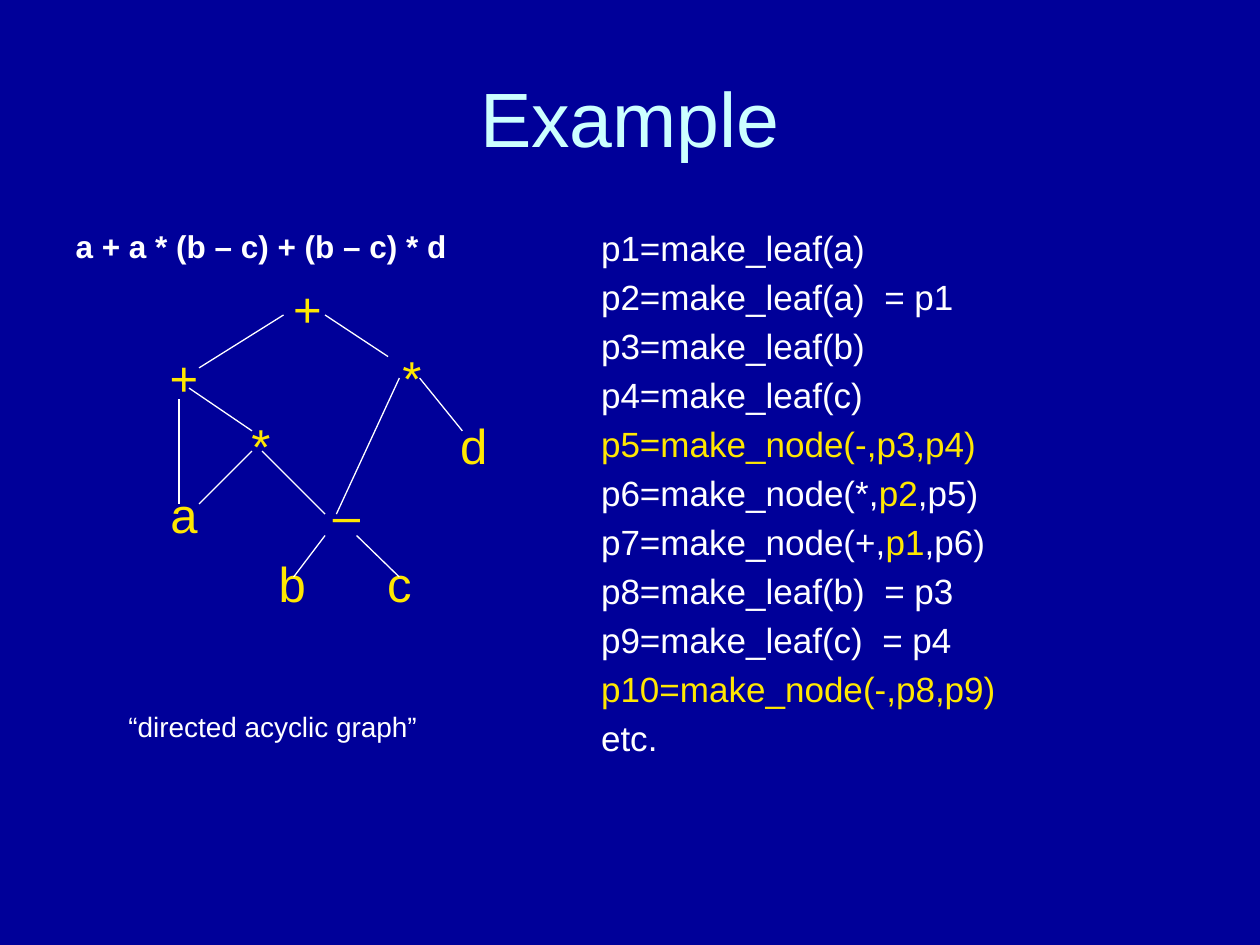
from lxml.etree import SubElement
from pptx import Presentation
from pptx.dml.color import RGBColor
from pptx.enum.shapes import MSO_CONNECTOR as Link
from pptx.enum.text import MSO_ANCHOR as Anchor, MSO_AUTO_SIZE as Fit, PP_ALIGN as Align
from pptx.oxml.ns import qn
from pptx.util import Inches, Pt

NAVY = RGBColor(0x00, 0x00, 0x99)
ICE = RGBColor(0xCC, 0xFF, 0xFF)
WHITE = RGBColor(0xFF, 0xFF, 0xFF)
GOLD = RGBColor(0xFF, 0xE7, 0x01)

TITLE = "Example"
FORMULA = "a + a * (b – c) + (b – c) * d"
CAPTION = "“directed acyclic graph”"

# Each tree row: (symbol, centre from the left edge of the slide)
TREE = [
    [("+", 2.44)],
    [("+", 1.46), ("*", 3.27)],
    [("*", 2.07), ("d", 3.76)],
    [("a", 1.46), ("–", 2.75)],
    [("b", 2.32), ("c", 3.17)],
]
TREE_TOP, ROW_STEP = 2.21, 0.545
NODE_W, NODE_H = 0.4, 0.45

# Edges of the graph: x1, y1, x2, y2
EDGES = [
    (1.58, 2.92, 2.25, 2.5),
    (2.58, 2.5, 3.08, 2.83),
    (3.33, 3, 3.67, 3.42),
    (3.17, 3, 2.67, 4.08),
    (2.58, 4.25, 2.33, 4.58),
    (2.83, 4.25, 3.17, 4.58),
    (1.42, 3.17, 1.42, 4),
    (1.5, 3.08, 2, 3.42),
    (2.08, 3.58, 2.58, 4.08),
    (2, 3.58, 1.58, 4),
]

# Each step: runs of (text, colour)
STEPS = [
    [("p1=make_leaf(a)", WHITE)],
    [("p2=make_leaf(a)  = p1", WHITE)],
    [("p3=make_leaf(b)", WHITE)],
    [("p4=make_leaf(c)", WHITE)],
    [("p5=make_node(-,p3,p4)", GOLD)],
    [("p6=make_node(*,", WHITE), ("p2", GOLD), (",p5)", WHITE)],
    [("p7=make_node(+,", WHITE), ("p1", GOLD), (",p6)", WHITE)],
    [("p8=make_leaf(b)  = p3", WHITE)],
    [("p9=make_leaf(c)  = p4", WHITE)],
    [("p10=make_node(-,p8,p9)", GOLD)],
    [("etc.", WHITE)],
]


def place(shape, left, top, width, height):
    shape.left, shape.top = Inches(left), Inches(top)
    shape.width, shape.height = Inches(width), Inches(height)
    frame = shape.text_frame
    frame.word_wrap = True
    frame.auto_size = Fit.NONE
    return frame


def style(para, size, color=None, bold=False):
    font = para.font
    font.name, font.size, font.bold = "Arial", Pt(size), bold
    if color is not None:
        font.color.rgb = color


def add_line(frame, runs, size, bold=False):
    """Add a paragraph without a bullet or indent."""
    para = frame.paragraphs[0]
    if para.runs:
        para = frame.add_paragraph()
    shared = len(runs) == 1
    style(para, size, runs[0][1] if shared else None, bold)
    for text, color in runs:
        run = para.add_run()
        run.text = text
        if not shared:
            run.font.color.rgb = color
    props = para._p.get_or_add_pPr()
    props.set("marL", "0")
    props.set("indent", "0")
    mark = props.find(qn("a:defRPr"))
    mark.addprevious(SubElement(props, qn("a:buNone")))


def add_node(slide, symbol, center, top):
    box = slide.shapes.add_textbox(0, 0, 0, 0)
    frame = place(box, center - NODE_W / 2, top, NODE_W, NODE_H)
    frame.margin_left = frame.margin_right = 0
    frame.margin_top = frame.margin_bottom = 0
    frame.text = symbol
    frame.paragraphs[0].alignment = Align.CENTER
    style(frame.paragraphs[0], 28, GOLD)


def add_edge(slide, x1, y1, x2, y2):
    edge = slide.shapes.add_connector(
        Link.STRAIGHT, Inches(x1), Inches(y1), Inches(x2), Inches(y2))
    edge.line.color.rgb = WHITE
    edge.line.width = Pt(0.75)
    SubElement(edge._element.spPr, qn("a:effectLst"))


def main():
    deck = Presentation()
    deck.slide_width, deck.slide_height = Inches(10), Inches(7.5)
    slide = deck.slides.add_slide(deck.slide_layouts.get_by_name("Two Content"))
    back = slide.background.fill
    back.solid()
    back.fore_color.rgb = NAVY
    title, formula, code = slide.placeholders

    head = place(title, 0.5, 0.3, 9, 1.25)
    head.text = TITLE
    head.vertical_anchor = Anchor.MIDDLE
    head.paragraphs[0].alignment = Align.CENTER
    style(head.paragraphs[0], 44, ICE)

    left = place(formula, 0.5, 1.75, 4.42, 4.95)
    add_line(left, [(FORMULA, WHITE)], 18, bold=True)

    right = place(code, 4.67, 1.75, 4.83, 4.95)
    for runs in STEPS:
        add_line(right, runs, 20)

    for i, row in enumerate(TREE):
        for symbol, center in row:
            add_node(slide, symbol, center, TREE_TOP + i * ROW_STEP)
    for edge in EDGES:
        add_edge(slide, *edge)

    note = place(slide.shapes.add_textbox(0, 0, 0, 0), 0.92, 5.58, 2.83, 0.37)
    note.text = CAPTION
    style(note.paragraphs[0], 16, WHITE)

    deck.save("out.pptx")


if __name__ == "__main__":
    main()
